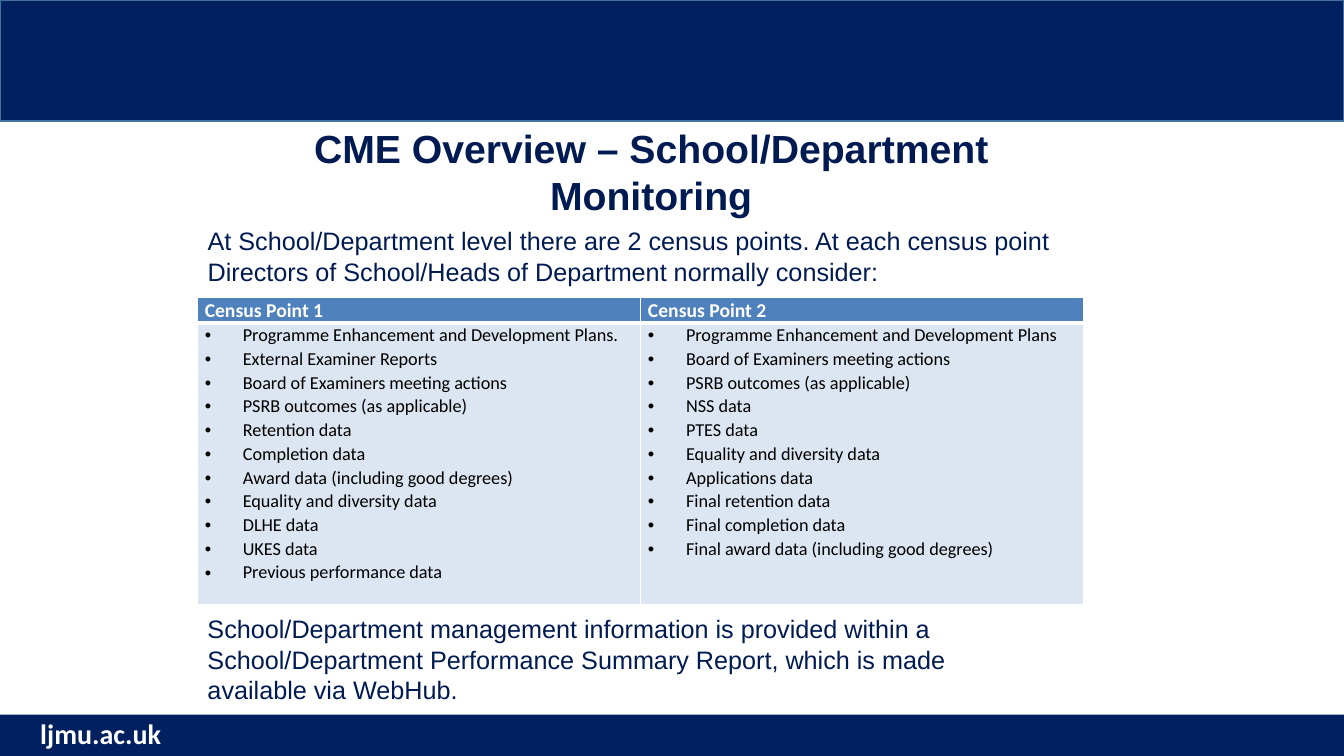
from lxml import etree
from pptx import Presentation
from pptx.dml.color import RGBColor
from pptx.enum import shapes, text
from pptx.oxml import ns
from pptx.util import Cm, Pt

TITLE = "CME Overview – School/Department Monitoring"
INTRO = ("At School/Department level there are 2 census points. At each census point "
         "Directors of School/Heads of Department normally consider:")
CLOSING = ("School/Department management information is provided within a "
           "School/Department Performance Summary Report, which is made available via WebHub.")
SITE = "ljmu.ac.uk"
CENSUS_POINTS = {
    "Census Point 1": [
        "Programme Enhancement and Development Plans.",
        "External Examiner Reports",
        "Board of Examiners meeting actions",
        "PSRB outcomes (as applicable)",
        "Retention data",
        "Completion data",
        "Award data (including good degrees)",
        "Equality and diversity data",
        "DLHE data",
        "UKES data",
        "Previous performance data",
    ],
    "Census Point 2": [
        "Programme Enhancement and Development Plans",
        "Board of Examiners meeting actions",
        "PSRB outcomes (as applicable)",
        "NSS data",
        "PTES data",
        "Equality and diversity data",
        "Applications data",
        "Final retention data",
        "Final completion data",
        "Final award data (including good degrees)",
    ],
}
COLOURS = {"band": "002060", "band edge": "43739E", "navy": "001A52", "white": "FFFFFF",
           "black": "000000", "header": "4F81BD", "cell": "DCE6F2"}

PAGE_WIDTH, PAGE_HEIGHT = Cm(33.87), Cm(19.05)
LEFT, TEXT_WIDTH = Cm(4.98), Cm(22.86)
COLUMN_WIDTH, ROW_HEIGHTS = Cm(11.17), (Cm(0.64), Cm(7.09))
CELL_MARGIN, BULLET_INDENT = Cm(0.18), Cm(0.96)
THIN, THICK = Pt(1), Pt(3)


def colour(name):
    return RGBColor.from_string(COLOURS[name])


def add_span(para, words, size, font, colour_name, bold=False):
    span = para.add_run()
    span.text = words
    span.font.size, span.font.name, span.font.bold = Pt(size), font, bold
    span.font.color.rgb = colour(colour_name)


def place(box, left, top, width, height):
    box.left, box.top, box.width, box.height = left, top, width, height
    box.text_frame.word_wrap = True
    box.text_frame.auto_size = text.MSO_AUTO_SIZE.NONE
    return box.text_frame.paragraphs[0]


def set_bullet(para, symbol=None, indent=0):
    """Give the paragraph a hanging bullet, or none when there is no symbol."""
    props = para._p.get_or_add_pPr()
    props.set("marL", str(indent))
    props.set("indent", str(-indent))
    if symbol:
        etree.SubElement(props, ns.qn("a:buFont"), typeface="Arial")
        etree.SubElement(props, ns.qn("a:buChar"), char=symbol)
    else:
        etree.SubElement(props, ns.qn("a:buNone"))


def add_band(page, top, height, edge=None):
    band = page.shapes.add_shape(shapes.MSO_SHAPE.RECTANGLE, 0, top, PAGE_WIDTH, height)
    band.shadow.inherit = False
    band.fill.solid()
    band.fill.fore_color.rgb = colour("band")
    if edge:
        band.line.color.rgb = colour(edge)
        band.line.width = Pt(1)
    else:
        band.line.fill.background()


def style_cell(cell, fill, top_line, bottom_line):
    cell.margin_left = cell.margin_right = CELL_MARGIN
    cell.margin_top = cell.margin_bottom = 0
    cell.fill.solid()
    cell.fill.fore_color.rgb = colour(fill)
    props = cell._tc.get_or_add_tcPr()
    sides = {"a:lnL": THIN, "a:lnR": THIN, "a:lnT": top_line, "a:lnB": bottom_line}
    for place_in_order, (side, width) in enumerate(sides.items()):
        line = etree.Element(ns.qn(side), w=str(int(width)))
        solid = etree.SubElement(line, ns.qn("a:solidFill"))
        etree.SubElement(solid, ns.qn("a:srgbClr"), val=COLOURS["white"])
        props.insert(place_in_order, line)


def add_census_table(page):
    columns = len(CENSUS_POINTS)
    table = page.shapes.add_table(2, columns, LEFT, Cm(7.49), COLUMN_WIDTH * columns,
                                  sum(ROW_HEIGHTS)).table
    for row, height in zip(table.rows, ROW_HEIGHTS):
        row.height = height
    for index, (heading, items) in enumerate(CENSUS_POINTS.items()):
        table.columns[index].width = COLUMN_WIDTH
        head, body = table.cell(0, index), table.cell(1, index)
        style_cell(head, "header", THIN, THICK)
        style_cell(body, "cell", THICK, THIN)

        para = head.text_frame.paragraphs[0]
        para.alignment, para.line_spacing = text.PP_ALIGN.JUSTIFY, 1.07
        add_span(para, heading, 14, "Calibri", "white", bold=True)

        for number, item in enumerate(items):
            frame = body.text_frame
            para = frame.add_paragraph() if number else frame.paragraphs[0]
            set_bullet(para, "•", BULLET_INDENT)
            para.line_spacing = 1.07
            add_span(para, item, 13, "Calibri", "black")


def main():
    deck = Presentation()
    deck.slide_width, deck.slide_height = PAGE_WIDTH, PAGE_HEIGHT
    page = deck.slides.add_slide(deck.slide_layouts[1])

    add_band(page, 0, Cm(3.05), "band edge")
    add_band(page, Cm(18.01), Cm(1.04))
    site = page.shapes.add_textbox(0, 0, 0, 0)
    para = place(site, Cm(0.43), Cm(17.93), Cm(4.22), Cm(1.12))
    para.alignment = text.PP_ALIGN.CENTER
    add_span(para, SITE, 20, "Calibri", "white", bold=True)

    title = page.shapes.title
    para = place(title, LEFT, Cm(3.53), TEXT_WIDTH, Cm(1.57))
    title.text_frame.vertical_anchor = text.MSO_ANCHOR.MIDDLE
    para.alignment = text.PP_ALIGN.CENTER
    add_span(para, TITLE, 28, "Arial", "navy", bold=True)

    para = place(page.placeholders[1], LEFT, Cm(5.56), TEXT_WIDTH, Cm(2.95))
    set_bullet(para)
    para.space_before = Pt(0)
    add_span(para, INTRO, 18, "Arial", "navy")

    add_census_table(page)

    closing = page.shapes.add_textbox(0, 0, 0, 0)
    para = place(closing, LEFT, Cm(15.34), Cm(20.88), Cm(2.57))
    add_span(para, CLOSING, 18, "Arial", "navy")

    deck.save("out.pptx")


if __name__ == "__main__":
    main()
